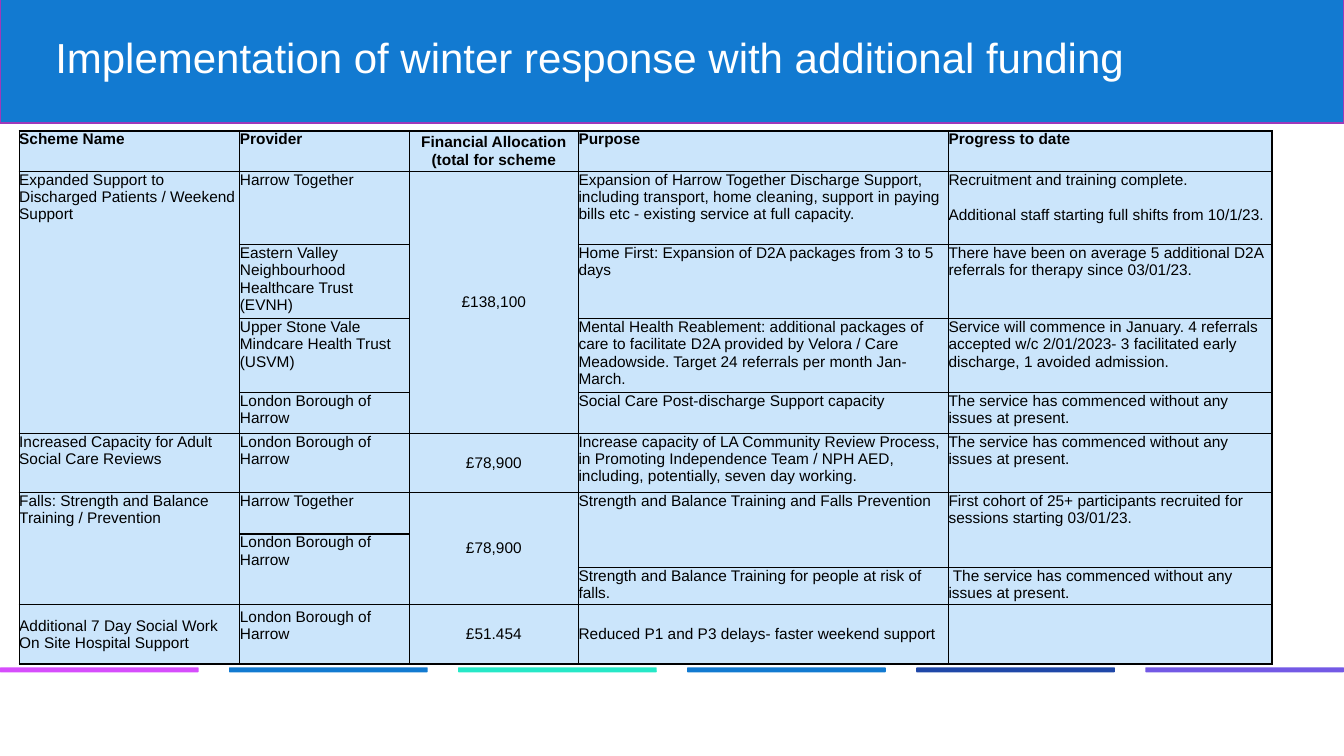
from itertools import takewhile

from lxml import etree
from pptx import Presentation
from pptx import util as u
from pptx.dml.color import RGBColor
from pptx.enum import shapes, text
from pptx.oxml.ns import qn

COLS = [16.42, 12.6, 12.6, 27.53, 24.07]
ROWS = [5.33, 9.73, 8.4, 9.73, 5.33, 7.87, 5.47, 4.4, 4.93, 7.87]
BARS = ["D64DFC", "127AD1", "26E8C7", "127AD1", "1F47A8", "7359E5"]
BOROUGH = "London Borough of Harrow"
ON_TRACK = "The service has commenced without any issues at present."
SCHEMES = [
    ["Scheme Name", "Provider", "Financial Allocation (total for scheme", "Purpose", "Progress to date"],
    ["Expanded Support to Discharged Patients / Weekend Support", "Harrow Together", "£138,100",
     "Expansion of Harrow Together Discharge Support, including transport, home cleaning, "
     "support in paying bills etc - existing service at full capacity.",
     "Recruitment and training complete.\nAdditional staff starting full shifts from 10/1/23."],
    [None, "Eastern Valley Neighbourhood Healthcare Trust (EVNH)", None,
     "Home First: Expansion of D2A packages from 3 to 5 days",
     "There have been on average 5 additional D2A referrals for therapy since 03/01/23."],
    [None, "Upper Stone Vale Mindcare Health Trust (USVM)", None,
     "Mental Health Reablement: additional packages of care to facilitate D2A provided by "
     "Velora / Care Meadowside. Target 24 referrals per month Jan-March.",
     "Service will commence in January. 4 referrals accepted w/c 2/01/2023- 3 facilitated "
     "early discharge, 1 avoided admission."],
    [None, BOROUGH, None, "Social Care Post-discharge Support capacity", ON_TRACK],
    ["Increased Capacity for Adult Social Care Reviews", BOROUGH, "£78,900",
     "Increase capacity of LA Community Review Process, in Promoting Independence Team / "
     "NPH AED, including, potentially, seven day working.", ON_TRACK],
    ["Falls: Strength and Balance Training / Prevention", "Harrow Together", "£78,900",
     "Strength and Balance Training and Falls Prevention",
     "First cohort of 25+ participants recruited for sessions starting 03/01/23."],
    [None, BOROUGH, None, None, None],
    [None, None, None, "Strength and Balance Training for people at risk of falls.",
     "\u00a0" + ON_TRACK],
    ["Additional 7 Day Social Work On Site Hospital Support", BOROUGH, "£51.454",
     "Reduced P1 and P3 delays- faster weekend support", ""],
]


def rgb(value):
    """Turn a hex string into a colour."""
    return RGBColor.from_string(value)


class Deck:
    """Hold the style and current slide; lengths are percentages of the slide."""

    font, ink, paper, cell_fill = "Arial", "000000", "FFFFFF", "CBE5FB"

    def __init__(self):
        """Open a widescreen deck with one blank slide."""
        self.prs = Presentation()
        self.prs.slide_width, self.prs.slide_height = u.Inches(13.33), u.Inches(7.5)
        self.s = self.prs.slides.add_slide(self.prs.slide_layouts[6])

    def x(self, share):
        """Convert a share of the slide's width."""
        return round(self.prs.slide_width * share / 100)

    def y(self, share):
        """Convert a share of the slide's height."""
        return round(self.prs.slide_height * share / 100)

    def box(self, left, top, width, height):
        """Convert a frame given in shares."""
        return self.x(left), self.y(top), self.x(width), self.y(height)

    def style(self, p, size, color, bold=False):
        """Set the font of a paragraph."""
        f = p.font
        f.name, f.size, f.bold = self.font, u.Pt(size), bold
        f.color.rgb = rgb(color)

    def shape(self, kind, frame, fill, line=None):
        """Add a filled preset shape."""
        sp = self.s.shapes.add_shape(kind, *self.box(*frame))
        sp.shadow.inherit = False
        sp.fill.solid()
        sp.fill.fore_color.rgb = rgb(fill)
        if line:
            sp.line.color.rgb = rgb(line)
            sp.line.width = u.Pt(1)
        else:
            sp.line.fill.background()
        return sp

    def title(self, words, frame):
        """Add the slide title."""
        tf = self.s.shapes.add_textbox(*self.box(*frame)).text_frame
        tf.word_wrap = True
        tf.vertical_anchor = text.MSO_ANCHOR.MIDDLE
        p = tf.paragraphs[0]
        p.text, p.line_spacing = words, 0.9
        self.style(p, 30, self.paper)

    def borders(self, cell):
        """Draw all four edges of a cell."""
        tc_pr = cell._tc.get_or_add_tcPr()
        for i, side in enumerate("LRTB"):
            ln = etree.Element(qn(f"a:ln{side}"), w=str(u.Pt(1)))
            fill = etree.SubElement(ln, qn("a:solidFill"))
            etree.SubElement(fill, qn("a:srgbClr"), val=self.ink)
            tc_pr.insert(i, ln)

    def cell(self, cell, words, bold, centred, middle):
        """Fill one table cell."""
        cell.margin_left = cell.margin_right = cell.margin_top = cell.margin_bottom = 0
        cell.vertical_anchor = text.MSO_ANCHOR.MIDDLE if middle else text.MSO_ANCHOR.TOP
        cell.fill.solid()
        cell.fill.fore_color.rgb = rgb(self.cell_fill)
        self.borders(cell)
        cell.text = words or ""
        for i, p in enumerate(cell.text_frame.paragraphs):
            if i:
                p.space_before = u.Pt(12.6)
            if centred:
                p.alignment = text.PP_ALIGN.CENTER
            self.style(p, 11, self.ink, bold)

    def table(self, left, top, cols, rows, data):
        """Add a table where None continues the cell above."""
        frame = self.box(left, top, sum(cols), sum(rows))
        tbl = self.s.shapes.add_table(len(rows), len(cols), *frame).table
        tbl.first_row = tbl.horz_banding = False
        for col, width in zip(tbl.columns, cols):
            col.width = self.x(width)
        for row, height in zip(tbl.rows, rows):
            row.height = self.y(height)
        for r, line in enumerate(data):
            for c, words in enumerate(line):
                self.cell(tbl.cell(r, c), words, r == 0, c == 2, c == 2 or r == len(rows) - 1)
        for r, line in enumerate(data):
            for c, words in enumerate(line):
                below = len(list(takewhile(lambda row: row[c] is None, data[r + 1:])))
                if words is not None and below:
                    tbl.cell(r, c).merge(tbl.cell(r + below, c))
        return tbl


def main():
    """Build and save the slide."""
    deck = Deck()
    deck.shape(shapes.MSO_SHAPE.RECTANGLE, (0, -0.4, 100, 16.67), "127AD1", "9E39BA")
    width = 14.78
    pitch = (100 - width) / (len(BARS) - 1)
    for i, color in enumerate(BARS):
        deck.shape(shapes.MSO_SHAPE.ROUNDED_RECTANGLE, (i * pitch, 88.27, width, 0.67), color)
    deck.title("Implementation of winter response with additional funding", (3.38, 4, 93.32, 7.87))
    tbl = deck.table(1.43, 17.33, COLS, ROWS, SCHEMES)
    tbl.cell(len(ROWS) - 1, 1).margin_bottom = deck.y(2.33)
    deck.prs.save("out.pptx")


if __name__ == "__main__":
    main()
